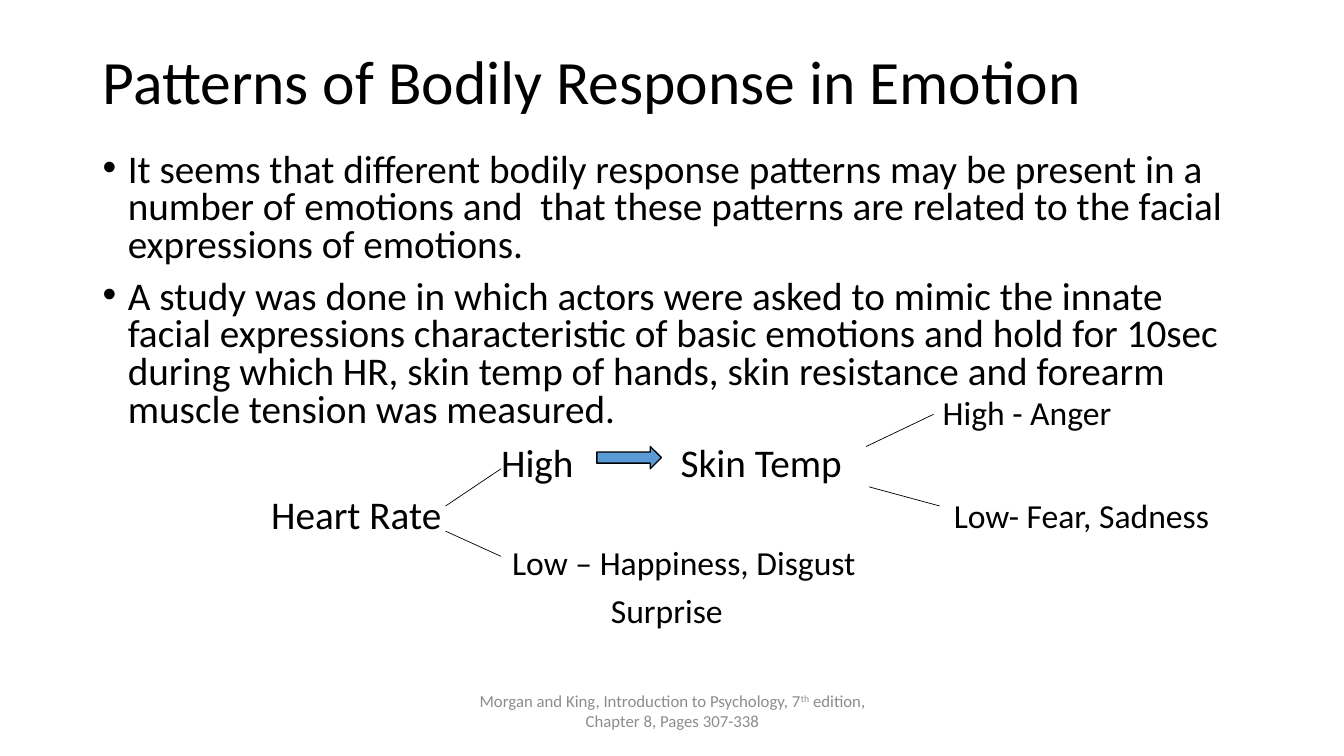
"""Build the slide on patterns of bodily response in emotion."""
from lxml.etree import SubElement
from pptx import Presentation
from pptx.dml.color import RGBColor
from pptx.enum.shapes import MSO_CONNECTOR as Connector, MSO_SHAPE as Shape
from pptx.enum.text import MSO_ANCHOR as Anchor, PP_ALIGN as Align
from pptx.oxml.ns import qn
from pptx.util import Inches, Pt

BLACK = RGBColor(0, 0, 0)
GREY = RGBColor(0x8C, 0x8C, 0x8C)
BLUE = RGBColor(0x5B, 0x9B, 0xD5)
FONT = "Calibri"

TITLE = "Patterns of Bodily Response in Emotion"
BULLETS = [
    "It seems that different bodily response patterns may be present in a number of "
    "emotions and  that these patterns are related to the facial expressions of emotions.",
    "A study was done in which actors were asked to mimic the innate facial expressions "
    "characteristic of basic emotions and hold for 10sec during which HR, skin temp of "
    "hands, skin resistance and forearm muscle tension was measured.",
]
FOOTER = [("Morgan and King, Introduction to Psychology, 7", False), ("th", True),
          (" edition, Chapter 8, Pages 307-338", False)]
# label, left, vertical centre, width, size
LABELS = [
    ("Heart Rate", 2.69, 5.1, 1.8, 28),
    ("High", 4.97, 4.58, 0.85, 28),
    ("Skin Temp", 6.75, 4.58, 1.75, 28),
    ("High - Anger", 9.35, 4.09, 2, 24),
    ("Low- Fear, Sadness", 9.46, 5.11, 2.9, 24),
    ("Low – Happiness, Disgust", 5.08, 5.58, 3.8, 24),
    ("Surprise", 6.06, 6.05, 1.5, 24),
]
LABEL_HEIGHT = 0.5
BRANCHES = [
    (4.42, 5.02, 4.97, 4.65),
    (4.42, 5.27, 4.97, 5.52),
    (8.59, 4.43, 9.26, 4.11),
    (8.62, 4.83, 9.32, 5.02),
]
ARROW = (5.92, 4.43, 0.64, 0.22)


def add_text(slide, box, anchor=Anchor.TOP, inset=(0.1, 0.05)):
    frame = slide.shapes.add_textbox(*map(Inches, box)).text_frame
    frame.word_wrap = True
    frame.vertical_anchor = anchor
    frame.margin_left = frame.margin_right = Inches(inset[0])
    frame.margin_top = frame.margin_bottom = Inches(inset[1])
    return frame


def style(paragraph, size, color=BLACK):
    paragraph.font.name = FONT
    paragraph.font.size = Pt(size)
    paragraph.font.color.rgb = color


def add_bullet(paragraph):
    properties = paragraph._p.get_or_add_pPr()
    properties.set("marL", str(Inches(0.25)))
    properties.set("indent", str(-Inches(0.25)))
    SubElement(properties, qn("a:buFont")).set("typeface", "Arial")
    SubElement(properties, qn("a:buChar")).set("char", "•")


def add_branch(slide, ends):
    branch = slide.shapes.add_connector(Connector.STRAIGHT, *map(Inches, ends))
    branch.line.color.rgb = BLACK
    branch.line.width = Pt(0.5)
    SubElement(branch._element.spPr, qn("a:effectLst"))


def main():
    presentation = Presentation()
    presentation.slide_width = Inches(13.33)
    presentation.slide_height = Inches(7.5)
    slide = presentation.slides.add_slide(presentation.slide_layouts[6])

    title = add_text(slide, (0.92, 0.4, 11.5, 0.87), Anchor.MIDDLE).paragraphs[0]
    title.text = TITLE
    title.line_spacing = 0.9
    style(title, 44)

    body = add_text(slide, (0.92, 1.47, 11.5, 2.9))
    for index, text in enumerate(BULLETS):
        paragraph = body.add_paragraph() if index else body.paragraphs[0]
        paragraph.text = text
        paragraph.line_spacing = 0.8
        paragraph.space_before = Pt(10)
        add_bullet(paragraph)
        style(paragraph, 28)

    for text, left, centre, width, size in LABELS:
        box = (left, centre - LABEL_HEIGHT / 2, width, LABEL_HEIGHT)
        label = add_text(slide, box, Anchor.MIDDLE, (0, 0)).paragraphs[0]
        label.text = text
        style(label, size)

    footer = add_text(slide, (4.42, 6.85, 4.5, 0.4), inset=(0.1, 0)).paragraphs[0]
    footer.alignment = Align.CENTER
    style(footer, 12, GREY)
    for text, raised in FOOTER:
        run = footer.add_run()
        run.text = text
        if raised:
            run.font._element.set("baseline", "30000")

    for ends in BRANCHES:
        add_branch(slide, ends)

    arrow = slide.shapes.add_shape(Shape.RIGHT_ARROW, *map(Inches, ARROW))
    arrow.shadow.inherit = False
    arrow.fill.solid()
    arrow.fill.fore_color.rgb = BLUE
    arrow.line.color.rgb = BLACK
    arrow.line.width = Pt(1)

    presentation.save("out.pptx")


if __name__ == "__main__":
    main()
